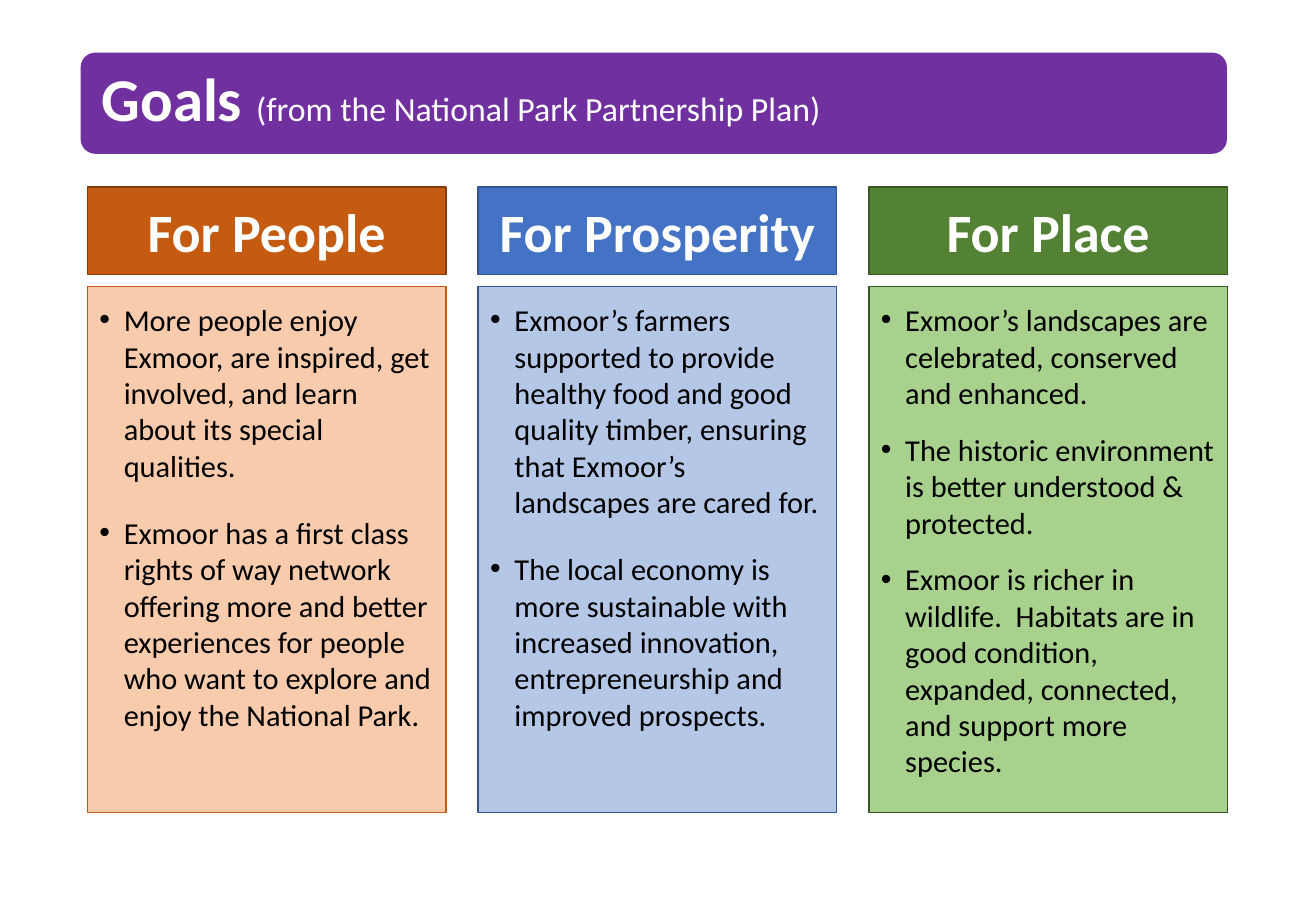
from dataclasses import dataclass
from typing import Any

from lxml.etree import SubElement
from pptx import Presentation
from pptx.dml.color import RGBColor
from pptx.enum.shapes import MSO_SHAPE as Preset
from pptx.enum.text import MSO_ANCHOR as Anchor, PP_ALIGN as Align
from pptx.oxml.ns import qn
from pptx.util import Inches, Pt

SLIDE_WIDTH, SLIDE_HEIGHT = Inches(10.83), Inches(7.5)
WHITE, BLACK, PURPLE = "FFFFFF", "000000", "7030A0"

# Columns and rows, in percent of the slide's width and height
FIRST_COLUMN, COLUMN_STEP, COLUMN_WIDTH = 6.65, 29.69, 27.24
HEADING_TOP, HEADING_HEIGHT = 20.53, 9.6
GOALS_TOP, GOALS_HEIGHT = 31.47, 57.73

HEADING_FRAME = {"word_wrap": True, "vertical_anchor": Anchor.MIDDLE}
GOALS_FRAME = {"word_wrap": True, "vertical_anchor": Anchor.TOP,
               "margin_top": Inches(0.12)}


@dataclass(frozen=True)
class Box:
    left: float
    top: float
    width: float
    height: float

    def lengths(self) -> tuple[int, int, int, int]:
        return (int(SLIDE_WIDTH * self.left / 100),
                int(SLIDE_HEIGHT * self.top / 100),
                int(SLIDE_WIDTH * self.width / 100),
                int(SLIDE_HEIGHT * self.height / 100))


@dataclass(frozen=True)
class Theme:
    heading: str
    heading_fill: str
    heading_line: str
    goals_fill: str
    goals_line: str
    space_after: int
    goals: tuple[str, ...]


THEMES = (
    Theme("For People", "C55A11", "843C0B", "F8CBAD", "C55A11", 12, (
        "More people enjoy Exmoor, are inspired, get involved, and learn "
        "about its special qualities.",
        "Exmoor has a first class rights of way network offering more and "
        "better experiences for people who want to explore and enjoy the "
        "National Park.")),
    Theme("For Prosperity", "4472C4", "325491", "B4C7E7", "325491", 12, (
        "Exmoor’s farmers supported to provide healthy food and good quality "
        "timber, ensuring that Exmoor’s landscapes are cared for.",
        "The local economy is more sustainable with increased innovation, "
        "entrepreneurship and improved prospects.")),
    Theme("For Place", "548235", "385723", "A9D18E", "385723", 6, (
        "Exmoor’s landscapes are celebrated, conserved and enhanced.",
        "The historic environment is better understood & protected.",
        "Exmoor is richer in wildlife.  Habitats are in good condition, "
        "expanded, connected, and support more species.")),
)


def colour(hex_code: str) -> RGBColor:
    return RGBColor.from_string(hex_code)


def apply(target: Any, values: dict[str, Any]) -> None:
    for attribute, value in values.items():
        setattr(target, attribute, value)


def add_panel(slide: Any, preset: Any, box: Box, fill: str, line: str) -> Any:
    panel = slide.shapes.add_shape(preset, *box.lengths())
    panel.shadow.inherit = False
    panel.fill.solid()
    panel.fill.fore_color.rgb = colour(fill)
    panel.line.color.rgb = colour(line)
    panel.line.width = Pt(1)
    return panel


def add_words(paragraph: Any, words: str, size: int, ink: str, bold: bool) -> None:
    run = paragraph.add_run()
    run.text = words
    apply(run.font, {"name": "Calibri", "size": Pt(size), "bold": bold})
    run.font.color.rgb = colour(ink)


def add_bullet(paragraph: Any) -> None:
    properties = paragraph._p.get_or_add_pPr()
    properties.set("marL", str(Inches(0.2)))
    properties.set("indent", str(-Inches(0.2)))
    SubElement(properties, qn("a:buFont"), typeface="Arial")
    SubElement(properties, qn("a:buChar"), char="•")


def add_title(slide: Any) -> None:
    banner = add_panel(slide, Preset.ROUNDED_RECTANGLE,
                       Box(6.19, 5.87, 86.98, 10.93), PURPLE, PURPLE)
    banner.adjustments[0] = 0.14
    title = slide.shapes.add_textbox(*Box(6.83, 5.33, 80.15, 11.73).lengths())
    apply(title.text_frame, HEADING_FRAME)
    paragraph = title.text_frame.paragraphs[0]
    paragraph.line_spacing = 0.9
    add_words(paragraph, "Goals ", 36, WHITE, True)
    add_words(paragraph, "(from the National Park Partnership Plan)", 20, WHITE, False)


def add_theme(slide: Any, theme: Theme, column: int) -> None:
    left = FIRST_COLUMN + column * COLUMN_STEP

    # Goals panel
    panel = add_panel(slide, Preset.RECTANGLE,
                      Box(left, GOALS_TOP, COLUMN_WIDTH, GOALS_HEIGHT),
                      theme.goals_fill, theme.goals_line)
    frame = panel.text_frame
    apply(frame, GOALS_FRAME)
    for index, goal in enumerate(theme.goals):
        paragraph = frame.add_paragraph() if index else frame.paragraphs[0]
        apply(paragraph, {"alignment": Align.LEFT, "space_before": Pt(6),
                          "space_after": Pt(theme.space_after)})
        add_bullet(paragraph)
        add_words(paragraph, goal, 18, BLACK, False)

    # Heading
    heading = add_panel(slide, Preset.RECTANGLE,
                        Box(left, HEADING_TOP, COLUMN_WIDTH, HEADING_HEIGHT),
                        theme.heading_fill, theme.heading_line)
    apply(heading.text_frame, HEADING_FRAME)
    paragraph = heading.text_frame.paragraphs[0]
    paragraph.alignment = Align.CENTER
    add_words(paragraph, theme.heading, 32, WHITE, True)


def main() -> None:
    deck = Presentation()
    apply(deck, {"slide_width": SLIDE_WIDTH, "slide_height": SLIDE_HEIGHT})
    slide = deck.slides.add_slide(deck.slide_layouts[6])
    add_title(slide)
    for column, theme in enumerate(THEMES):
        add_theme(slide, theme, column)
    deck.save("out.pptx")


if __name__ == "__main__":
    main()
